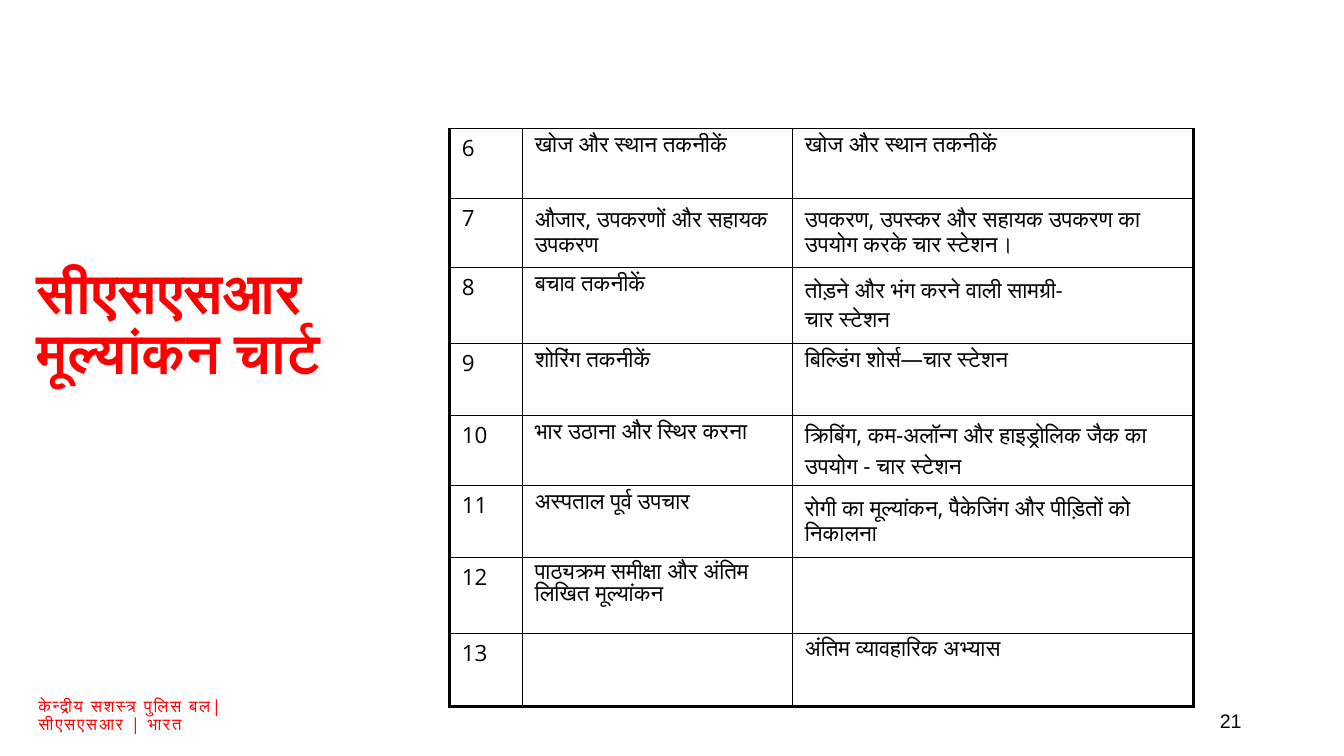
"""Build the CSSR evaluation chart slide with its lesson table."""
from lxml import etree
from pptx import Presentation
from pptx.dml.color import RGBColor
from pptx.enum.text import MSO_ANCHOR as Anchor, MSO_AUTO_SIZE as AutoSize, PP_ALIGN as Align
from pptx.oxml.ns import qn
from pptx.util import Pt

COLORS = {"ink": "000000", "accent": "FF0000", "paper": "FFFFFF"}
THIN, THICK = 1, 2.25
COLUMN_WIDTHS = [52, 193, 286.5]
ROW_HEIGHTS = [49.5, 49.5, 54.5, 51.5, 50, 51.5, 54, 52]
PLAIN = {"spacing": 1}
TIGHT = {"spacing": 0.8}
CENTRED = {"spacing": 0.8, "anchor": Anchor.MIDDLE}
LESSONS = [
    ("6", ("खोज और स्थान तकनीकें", TIGHT), ("खोज और स्थान तकनीकें", TIGHT)),
    ("7", ("औजार, उपकरणों और सहायक उपकरण", CENTRED),
     ("उपकरण, उपस्कर और सहायक उपकरण का उपयोग करके चार स्टेशन।", CENTRED)),
    ("8", ("बचाव तकनीकें", TIGHT),
     ("तोड़ने और भंग करने वाली सामग्री-\nचार स्टेशन", CENTRED)),
    ("9", ("शोरिंग तकनीकें", TIGHT), ("बिल्डिंग शोर्स—चार स्टेशन", TIGHT)),
    ("10", ("भार उठाना और स्थिर करना", TIGHT),
     ("क्रिबिंग, कम-अलॉन्ग और हाइड्रोलिक जैक का उपयोग - चार स्टेशन", PLAIN)),
    ("11", ("अस्पताल पूर्व उपचार", TIGHT),
     ("रोगी का मूल्यांकन, पैकेजिंग और पीड़ितों को निकालना", CENTRED)),
    ("12", ("पाठ्यक्रम समीक्षा और अंतिम लिखित मूल्यांकन", {"spacing": 0.73}), ("", PLAIN)),
    ("13", ("", PLAIN), ("अंतिम व्यावहारिक अभ्यास", TIGHT)),
]


def color(name):
    """Return the named colour."""
    return RGBColor.from_string(COLORS[name])


def write_text(frame, text, size=16, font="Open Sans", ink="ink", bold=False,
               spacing=1, before=0, align=Align.LEFT, tracking=0):
    """Fill a text frame, one paragraph per line of text."""
    frame.word_wrap = True
    for index, line in enumerate(text.split("\n")):
        para = frame.add_paragraph() if index else frame.paragraphs[0]
        para.alignment = align
        para.line_spacing = spacing
        para.space_before = Pt(before if index else 0)
        span = para.add_run()
        span.text = line
        span.font.size = Pt(size)
        span.font.bold = bold
        span.font.color.rgb = color(ink)
        span.font.name = font
        properties = span.font._element
        for script in ("a:ea", "a:cs"):
            etree.SubElement(properties, qn(script), typeface=font)
        if tracking:
            properties.set("spc", str(round(tracking * 100)))


def set_margins(frame, across, down):
    """Set the side and the top and bottom margins of a frame or cell."""
    frame.margin_left = frame.margin_right = Pt(across)
    frame.margin_top = frame.margin_bottom = Pt(down)


def add_label(page, bounds, text, margins, anchor=Anchor.TOP, **style):
    """Add a text box."""
    box = page.shapes.add_textbox(*map(Pt, bounds))
    frame = box.text_frame
    set_margins(frame, *margins)
    frame.vertical_anchor = anchor
    write_text(frame, text, **style)


def set_borders(cell, widths):
    """Draw the cell borders with widths keyed by side."""
    properties = cell._tc.get_or_add_tcPr()
    for index, (side, width) in enumerate(widths.items()):
        line = etree.Element(qn(f"a:ln{side}"), w=str(Pt(width)))
        fill = etree.SubElement(line, qn("a:solidFill"))
        etree.SubElement(fill, qn("a:srgbClr"), val=COLORS["ink"])
        properties.insert(index, line)


def fill_cell(cell, text, widths, anchor=Anchor.TOP, **style):
    """Write and format one table cell."""
    set_margins(cell, 9, 3)
    cell.vertical_anchor = anchor
    cell.fill.background()
    set_borders(cell, widths)
    if text:
        write_text(cell.text_frame, text, before=3.6, **style)


def add_lesson_table(page):
    """Add the table of lessons with a heavier outline."""
    last_row, last_column = len(LESSONS) - 1, len(COLUMN_WIDTHS) - 1
    table = page.shapes.add_table(
        len(LESSONS), len(COLUMN_WIDTHS), Pt(321), Pt(92),
        Pt(sum(COLUMN_WIDTHS)), Pt(sum(ROW_HEIGHTS))).table
    table.first_row = table.horz_banding = False
    for column, width in zip(table.columns, COLUMN_WIDTHS):
        column.width = Pt(width)
    for row, (number, topic, task) in enumerate(LESSONS):
        table.rows[row].height = Pt(ROW_HEIGHTS[row])
        for column, (text, style) in enumerate([(number, PLAIN), topic, task]):
            widths = {"L": THIN if column else THICK,
                      "R": THICK if column == last_column else THIN,
                      "T": THIN,
                      "B": THICK if row == last_row else THIN}
            fill_cell(table.cell(row, column), text, widths, **style)


def set_title(page, text):
    """Place and format the slide title."""
    title = page.shapes.title
    title.left, title.top, title.width, title.height = map(Pt, (19, 180, 276.5, 104.5))
    title.fill.solid()
    title.fill.fore_color.rgb = color("paper")
    frame = title.text_frame
    frame.auto_size = AutoSize.NONE
    frame.vertical_anchor = Anchor.MIDDLE
    set_margins(frame, 7.2, 3.6)
    write_text(frame, text, size=40, ink="accent", bold=True, spacing=0.9)


def main():
    """Build and save the deck."""
    deck = Presentation()
    deck.slide_width, deck.slide_height = Pt(960), Pt(540)
    page = deck.slides.add_slide(deck.slide_layouts[5])
    set_title(page, "सीएसएसआर मूल्यांकन चार्ट")
    add_lesson_table(page)
    add_label(page, (24.5, 495.5, 184.5, 35), "केन्द्रीय सशस्त्र पुलिस बल|सीएसएसआर | भारत",
              (3, 3), size=12, ink="accent", spacing=0.9, tracking=1.2)
    add_label(page, (678, 500.5, 216, 28.5), "21", (7.2, 3.6), anchor=Anchor.MIDDLE,
              size=14, font="Arial", align=Align.RIGHT)
    deck.save("out.pptx")


if __name__ == "__main__":
    main()
